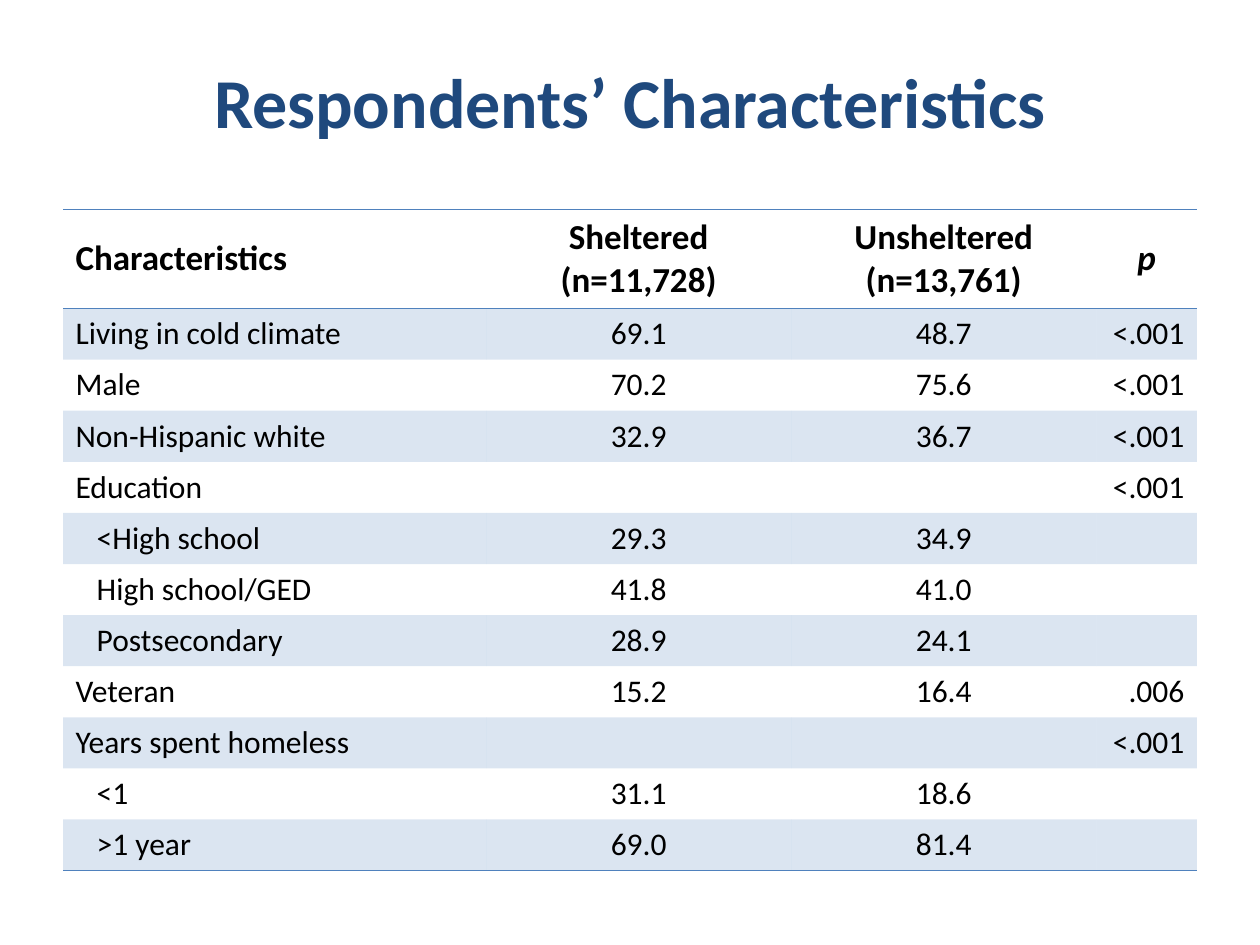
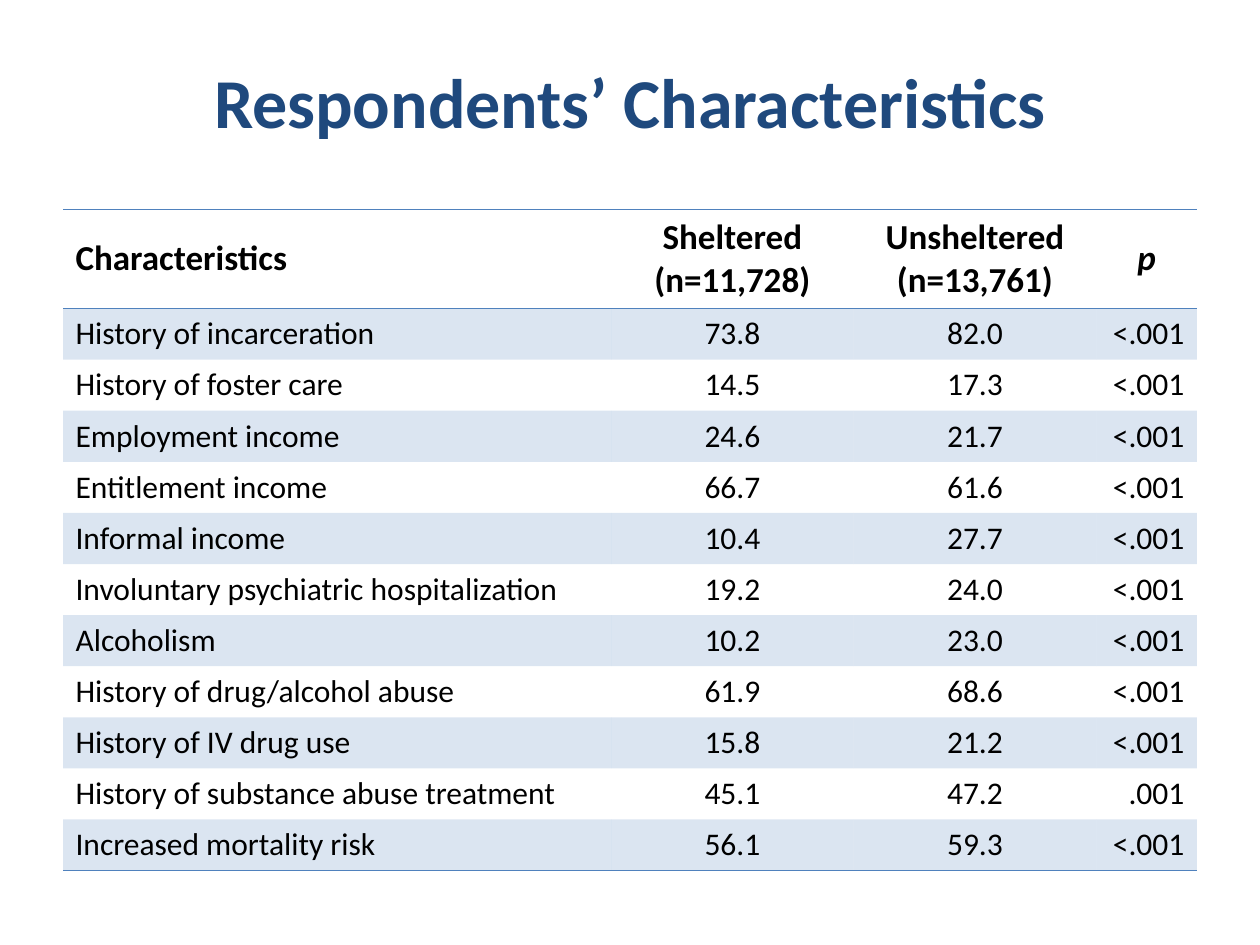
from lxml.etree import SubElement
from pptx import Presentation
from pptx.dml.color import RGBColor
from pptx.enum.text import MSO_ANCHOR as Anchor, PP_ALIGN as Align
from pptx.oxml import parse_xml
from pptx.oxml.ns import nsdecls, qn
from pptx.util import Cm, Pt

NAVY = RGBColor(0x1F, 0x49, 0x7D)
BLUE = RGBColor(0x4F, 0x81, 0xBD)
BLACK = RGBColor(0, 0, 0)
FONT = "Calibri"
NO_TABLE_STYLE = "{2D5ABB26-0587-4C30-8999-92F81FD0307C}"

TITLE = "Respondents’ Characteristics"
TITLE_BOX = (1.27, 0.43, 22.86, 3.18)
TABLE_BOX = (1.27, 4.22, 22.86, 13.33)
HEADER_HEIGHT = 2
P_WIDTH = 2.03
SUBGROUP_INDENT = 0.68

HEADERS = ("Characteristics", "Sheltered\n(n=11,728)", "Unsheltered\n(n=13,761)", "p")
ALIGNS = (Align.LEFT, Align.CENTER, Align.CENTER, Align.RIGHT)
SUBGROUPS = {"<High school", "High school/GED", "Postsecondary", "<1", ">1 year"}

DEMOGRAPHICS = [
    ("Living in cold climate", "69.1", "48.7", "<.001"),
    ("Male", "70.2", "75.6", "<.001"),
    ("Non-Hispanic white", "32.9", "36.7", "<.001"),
    ("Education", "", "", "<.001"),
    ("<High school", "29.3", "34.9", ""),
    ("High school/GED", "41.8", "41.0", ""),
    ("Postsecondary", "28.9", "24.1", ""),
    ("Veteran", "15.2", "16.4", ".006"),
    ("Years spent homeless", "", "", "<.001"),
    ("<1", "31.1", "18.6", ""),
    (">1 year", "69.0", "81.4", ""),
]
HISTORY = [
    ("History of incarceration", "73.8", "82.0", "<.001"),
    ("History of foster care", "14.5", "17.3", "<.001"),
    ("Employment income", "24.6", "21.7", "<.001"),
    ("Entitlement income", "66.7", "61.6", "<.001"),
    ("Informal income", "10.4", "27.7", "<.001"),
    ("Involuntary psychiatric hospitalization", "19.2", "24.0", "<.001"),
    ("Alcoholism", "10.2", "23.0", "<.001"),
    ("History of drug/alcohol abuse", "61.9", "68.6", "<.001"),
    ("History of IV drug use", "15.8", "21.2", "<.001"),
    ("History of substance abuse treatment", "45.1", "47.2", ".001"),
    ("Increased mortality risk", "56.1", "59.3", "<.001"),
]


def write(tf, text, size=18, color=BLACK, bold=False, italic=False, align=Align.LEFT):
    """Write one paragraph per line of text into a text frame."""
    for i, line in enumerate(text.split("\n")):
        p = tf.add_paragraph() if i else tf.paragraphs[0]
        p.alignment = align
        r = p.add_run()
        r.text = line
        font = r.font
        font.name, font.size, font.bold, font.italic = FONT, Pt(size), bold, italic
        font.color.rgb = color


def add_title(s, box):
    """Add the centred slide title in its box."""
    tf = s.shapes.add_textbox(*map(Cm, box)).text_frame
    tf.word_wrap = True
    tf.vertical_anchor = Anchor.MIDDLE
    write(tf, TITLE, size=40, color=NAVY, bold=True, align=Align.CENTER)


def shade(cell):
    """Fill a cell with the translucent band colour."""
    cell.fill.solid()
    cell.fill.fore_color.rgb = BLUE
    color = next(cell._tc.tcPr.iter(qn("a:srgbClr")))
    SubElement(color, qn("a:alpha"), val="20000")


def rule(cell, *sides):
    """Draw one-point lines on the given sides of a cell."""
    tcPr = cell._tc.get_or_add_tcPr()
    for i, side in enumerate(sides):
        tcPr.insert(i, parse_xml(
            f'<a:ln{side} {nsdecls("a")} w="{Pt(1)}"><a:solidFill>'
            f'<a:srgbClr val="{BLUE}"/></a:solidFill></a:ln{side}>'))


def add_header(table):
    """Fill the header row, ruled above and below."""
    for cell, text in zip(table.rows[0].cells, HEADERS):
        align = Align.LEFT if text == HEADERS[0] else Align.CENTER
        write(cell.text_frame, text, size=20, bold=True, italic=text == "p", align=align)
        cell.vertical_anchor = Anchor.MIDDLE
        cell.fill.background()
        rule(cell, "T", "B")


def add_body(table, rows):
    """Fill the banded body rows and rule off the last one."""
    for i, values in enumerate(rows, 1):
        cells = table.rows[i].cells
        for cell, text, align in zip(cells, values, ALIGNS):
            if text:
                write(cell.text_frame, text, align=align)
            if i % 2:
                shade(cell)
            else:
                cell.fill.background()
            if i == len(rows):
                rule(cell, "B")
        if values[0] in SUBGROUPS:
            cells[0].margin_left = Cm(SUBGROUP_INDENT)


def add_results(s, box, rows, label_width):
    """Add the results table, sharing the remaining width between both groups."""
    width, height = box[2:]
    frame = s.shapes.add_table(len(rows) + 1, len(HEADERS), *map(Cm, box))
    table = frame.table
    table._tbl.tblPr.find(qn("a:tableStyleId")).text = NO_TABLE_STYLE
    table.horz_banding = False
    group_width = (width - label_width - P_WIDTH) / 2
    for column, w in zip(table.columns, (label_width, group_width, group_width, P_WIDTH)):
        column.width = Cm(w)
    row_height = (height - HEADER_HEIGHT) / len(rows)
    for i, row in enumerate(table.rows):
        row.height = Cm(row_height if i else HEADER_HEIGHT)
    add_header(table)
    add_body(table, rows)


def add_characteristics_slide(prs, rows, label_width):
    """Add a slide with the shared title and one results table."""
    s = prs.slides.add_slide(prs.slide_layouts[6])
    add_title(s, TITLE_BOX)
    add_results(s, TABLE_BOX, rows, label_width)


def main():
    """Build and save the presentation."""
    prs = Presentation()
    prs.slide_width, prs.slide_height = Cm(25.4), Cm(19.05)
    add_characteristics_slide(prs, DEMOGRAPHICS, label_width=8.53)
    add_characteristics_slide(prs, HISTORY, label_width=11.05)
    prs.save("out.pptx")


if __name__ == "__main__":
    main()
